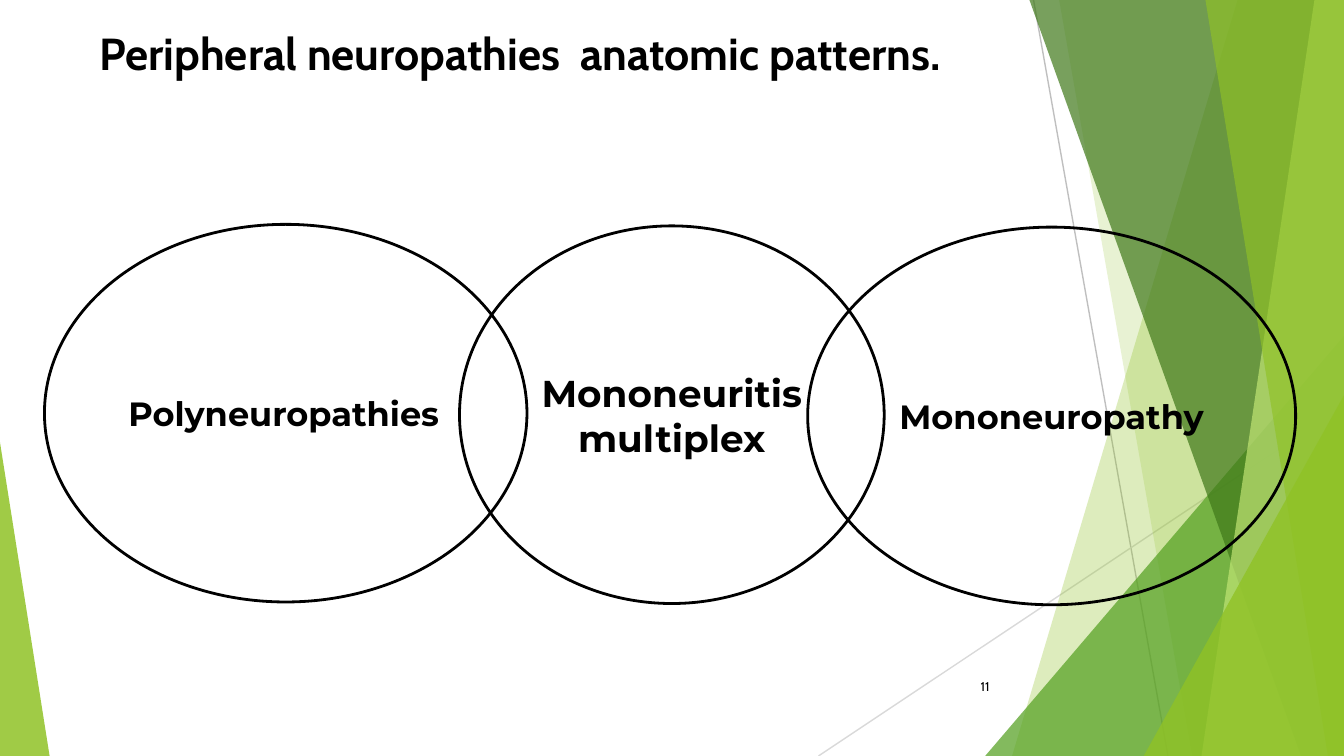
"""Build the slide on the anatomic patterns of peripheral neuropathies."""
from dataclasses import dataclass

import pptx
import pptx.dml.color
import pptx.enum.shapes
import pptx.enum.text
import pptx.oxml
import pptx.oxml.ns
import pptx.util

Pt = pptx.util.Pt
Align = pptx.enum.text.PP_ALIGN
WIDTH, HEIGHT = 720, 405
BLACK = "000000"
LIME = "90C226"


@dataclass
class Ray:
    start: tuple[float, float]
    end: tuple[float, float]
    color: str


@dataclass
class Band:
    top_left: float
    bottom_left: float
    color: str
    opacity: int


@dataclass
class Wedge:
    left: float
    top: float
    width: float
    apex: float
    color: str
    opacity: int


@dataclass
class Pattern:
    label: str
    left: float
    top: float
    width: float
    size: float
    align: Align = Align.CENTER


RAYS = [
    Ray((553.7, 0), (625.7, HEIGHT), "BFBFBF"),
    Ray((WIDTH, 217.4), (438.5, HEIGHT), "D9D9D9"),
]
FACETS = [
    Band(663, 542.2, LIME, 30),
    Band(567.4, 638.6, LIME, 20),
    Wedge(527.8, 180, 192.2, 1, "54A021", 72),
    Band(551.5, 697, "3F7819", 70),
    Band(704.2, 643.7, "C0E474", 70),
    Band(645.8, 711.4, LIME, 65),
    Wedge(612.7, 211.7, 107.3, 1, LIME, 80),
    Wedge(0, 236.9, 26.6, 0, LIME, 85),
]
PATTERN_HEIGHT = 202.3
PATTERNS = [
    Pattern("Mononeuritis multiplex", 246.2, 121, 227.5, 20),
    Pattern("Polyneuropathies", 23.8, 120.2, 258.5, 18, Align.LEFT),
    Pattern("Mononeuropathy", 432.7, 121.7, 261.4, 18),
]


def rgb(color: str) -> pptx.dml.color.RGBColor:
    """Return the colour for a hex string."""
    return pptx.dml.color.RGBColor.from_string(color)


def paint(shape, color: str, opacity: int) -> None:
    """Give a shape a translucent fill without outline or shadow."""
    shape.shadow.inherit = False
    shape.line.fill.background()
    shape.fill.solid()
    shape.fill.fore_color.rgb = rgb(color)
    tint = shape.fill._xPr.find(".//" + pptx.oxml.ns.qn("a:srgbClr"))
    alpha = pptx.oxml.parse_xml(f'<a:alpha {pptx.oxml.ns.nsdecls("a")} val="{opacity * 1000}"/>')
    tint.append(alpha)


def write(shape, text: str, font: str, size: float, align: Align, bold: bool = True) -> None:
    """Set one black paragraph, vertically centred, in a shape."""
    frame = shape.text_frame
    frame.word_wrap = True
    frame.auto_size = pptx.enum.text.MSO_AUTO_SIZE.NONE
    frame.vertical_anchor = pptx.enum.text.MSO_ANCHOR.MIDDLE
    frame.margin_left = frame.margin_right = Pt(7.2)
    frame.margin_top = frame.margin_bottom = Pt(7.2)
    frame.text = text
    paragraph = frame.paragraphs[0]
    paragraph.alignment = align
    paragraph.font.name = font
    paragraph.font.size = Pt(size)
    paragraph.font.bold = bold
    paragraph.font.color.rgb = rgb(BLACK)


def draw_ray(shapes, ray: Ray) -> None:
    """Draw a thin decorative line."""
    line = shapes.add_connector(
        pptx.enum.shapes.MSO_CONNECTOR.STRAIGHT, *map(Pt, ray.start + ray.end)
    )
    line.line.color.rgb = rgb(ray.color)
    line.line.width = Pt(0.75)
    line._element.spPr.append(
        pptx.oxml.parse_xml(f'<a:effectLst {pptx.oxml.ns.nsdecls("a")}/>')
    )


def draw_band(shapes, band: Band) -> None:
    """Draw a full-height band that reaches the right edge."""
    outline = shapes.build_freeform(Pt(band.top_left), Pt(0))
    corners = [(WIDTH, 0), (WIDTH, HEIGHT), (band.bottom_left, HEIGHT)]
    outline.add_line_segments([(Pt(x), Pt(y)) for x, y in corners], close=True)
    paint(outline.convert_to_shape(), band.color, band.opacity)


def draw_wedge(shapes, wedge: Wedge) -> None:
    """Draw a right triangle that stands on the bottom edge."""
    triangle = shapes.add_shape(
        pptx.enum.shapes.MSO_SHAPE.ISOSCELES_TRIANGLE,
        Pt(wedge.left), Pt(wedge.top), Pt(wedge.width), Pt(HEIGHT - wedge.top),
    )
    triangle.adjustments[0] = wedge.apex
    paint(triangle, wedge.color, wedge.opacity)


def draw_pattern(shapes, pattern: Pattern) -> None:
    """Draw one labelled ellipse of the overlapping row."""
    ellipse = shapes.add_shape(
        pptx.enum.shapes.MSO_SHAPE.OVAL,
        Pt(pattern.left), Pt(pattern.top), Pt(pattern.width), Pt(PATTERN_HEIGHT),
    )
    ellipse.shadow.inherit = False
    ellipse.fill.background()
    ellipse.line.color.rgb = rgb(BLACK)
    ellipse.line.width = Pt(1.5)
    write(ellipse, pattern.label, "Montserrat", pattern.size, pattern.align)


def main() -> None:
    """Assemble and save the slide."""
    deck = pptx.Presentation()
    deck.slide_width, deck.slide_height = Pt(WIDTH), Pt(HEIGHT)
    slide = deck.slides.add_slide(deck.slide_layouts.get_by_name("Title Only"))
    shapes = slide.shapes

    for ray in RAYS:
        draw_ray(shapes, ray)
    for facet in FACETS:
        if isinstance(facet, Band):
            draw_band(shapes, facet)
        else:
            draw_wedge(shapes, facet)

    title = shapes.title
    title.left, title.top, title.width, title.height = Pt(46), Pt(0), Pt(618.5), Pt(56.2)
    write(title, "Peripheral neuropathies  anatomic patterns.", "Cabin", 24, Align.LEFT)

    page_number = shapes.add_textbox(Pt(507.6), Pt(357.1), Pt(40.3), Pt(21.6))
    write(page_number, "11", "Cabin", 6.8, Align.CENTER, bold=False)

    for pattern in PATTERNS:
        draw_pattern(shapes, pattern)

    deck.save("out.pptx")


if __name__ == "__main__":
    main()
